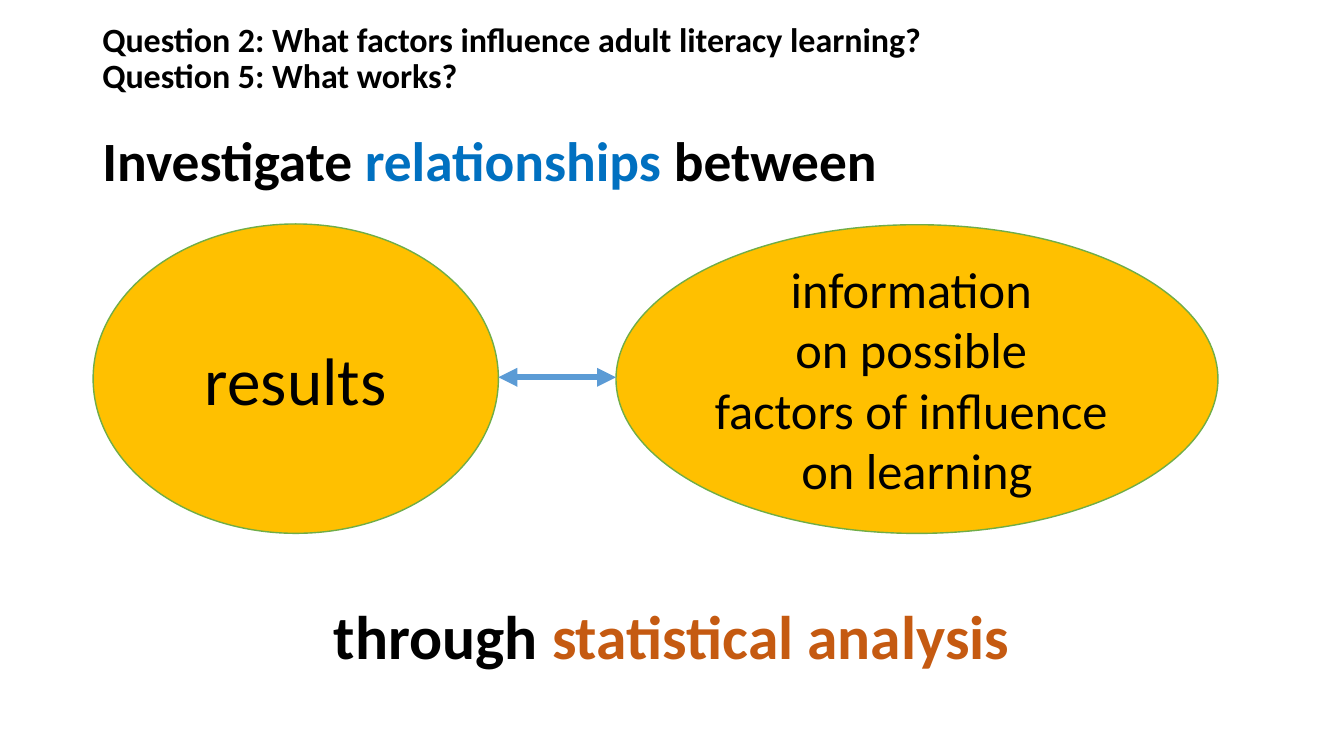
from dataclasses import dataclass

from lxml import etree
from pptx import Presentation
from pptx import util as u
from pptx.dml.color import RGBColor
from pptx.enum import shapes, text
from pptx.oxml.ns import qn

FONT = "Calibri"
COLOURS = {
    "black": "000000",
    "blue": "0070C0",
    "rust": "C55A11",
    "amber": "FFC000",
    "green": "70AD47",
    "arrow": "5B9BD5",
}
MARGIN, CONTENT_WIDTH = 66, 828
ARROW_Y = 269.5


@dataclass(frozen=True)
class Run:
    words: str
    size: float
    colour: str = "black"
    bold: bool = True


@dataclass(frozen=True)
class Line:
    runs: tuple[Run, ...]
    space_before: float = 0
    spacing: float = 0.9
    align: text.PP_ALIGN = text.PP_ALIGN.LEFT


@dataclass(frozen=True)
class Heading:
    top: float
    height: float
    lines: tuple[Line, ...]


@dataclass(frozen=True)
class Oval:
    left: float
    top: float
    width: float
    height: float
    size: float
    lines: tuple[str, ...]


HEADINGS = (
    Heading(25, 104.5, (
        Line((Run("Question 2: What factors influence adult literacy learning?", 24.3),)),
        Line((Run("Question 5: What works?", 24.3),)),
        Line((
            Run("Investigate ", 39.6),
            Run("relationships ", 39.6, "blue"),
            Run("between", 39.6),
        ), space_before=26.7),
    )),
    Heading(429, 56, (
        Line((
            Run("through ", 44),
            Run("statistical analysis", 44, "rust"),
        ), align=text.PP_ALIGN.CENTER),
    )),
)
RESULTS = Oval(66.5, 160, 289.5, 221, 48, ("results",))
FACTORS = Oval(440, 160.5, 430, 220.5, 36, (
    "information ", "on possible ", "factors of influence ", "on learning"))


def rgb(name: str) -> RGBColor:
    return RGBColor.from_string(COLOURS[name])


def write_lines(frame, lines: tuple[Line, ...]) -> None:
    frame.word_wrap = True
    frame.vertical_anchor = text.MSO_ANCHOR.MIDDLE
    frame.text = "\n".join("" for _ in lines)
    for paragraph, line in zip(frame.paragraphs, lines):
        paragraph.alignment = line.align
        paragraph.line_spacing = line.spacing
        paragraph.space_before = u.Pt(line.space_before)
        for part in line.runs:
            run = paragraph.add_run()
            run.text = part.words
            run.font.name = FONT
            run.font.size = u.Pt(part.size)
            run.font.bold = part.bold
            run.font.color.rgb = rgb(part.colour)


def draw_heading(slide, heading: Heading) -> None:
    box = slide.shapes.add_textbox(
        u.Pt(MARGIN), u.Pt(heading.top), u.Pt(CONTENT_WIDTH), u.Pt(heading.height))
    write_lines(box.text_frame, heading.lines)


def draw_oval(slide, oval: Oval) -> None:
    ellipse = slide.shapes.add_shape(
        shapes.MSO_SHAPE.OVAL, u.Pt(oval.left), u.Pt(oval.top),
        u.Pt(oval.width), u.Pt(oval.height))
    ellipse.shadow.inherit = False
    ellipse.fill.solid()
    ellipse.fill.fore_color.rgb = rgb("amber")
    ellipse.line.color.rgb = rgb("green")
    ellipse.line.width = u.Pt(1)
    write_lines(ellipse.text_frame, tuple(
        Line((Run(words, oval.size, bold=False),), spacing=1.0,
             align=text.PP_ALIGN.CENTER)
        for words in oval.lines))


def draw_double_arrow(slide, start: float, end: float, y: float) -> None:
    arrow = slide.shapes.add_connector(
        shapes.MSO_CONNECTOR.STRAIGHT, u.Pt(start), u.Pt(y), u.Pt(end), u.Pt(y))
    arrow.line.color.rgb = rgb("arrow")
    arrow.line.width = u.Pt(4.5)
    outline = arrow.line._get_or_add_ln()
    for tip in ("a:headEnd", "a:tailEnd"):
        etree.SubElement(outline, qn(tip), type="triangle")
    etree.SubElement(arrow._element.spPr, qn("a:effectLst"))


def main() -> None:
    deck = Presentation()
    deck.slide_width, deck.slide_height = u.Pt(960), u.Pt(540)
    slide = deck.slides.add_slide(deck.slide_layouts[6])
    for heading in HEADINGS:
        draw_heading(slide, heading)
    for oval in (RESULTS, FACTORS):
        draw_oval(slide, oval)
    draw_double_arrow(slide, RESULTS.left + RESULTS.width, FACTORS.left, ARROW_Y)
    deck.save("out.pptx")


if __name__ == "__main__":
    main()
